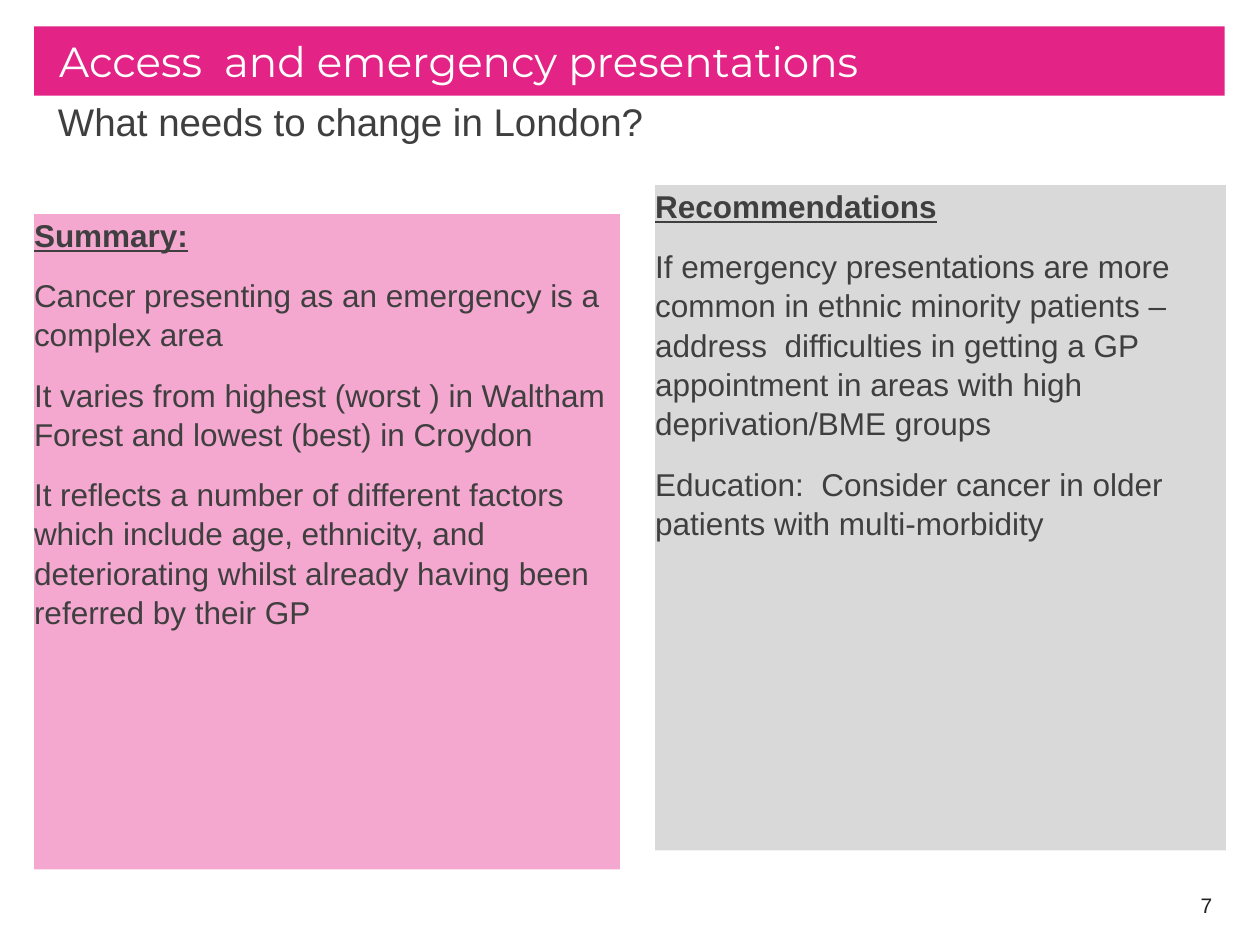
from dataclasses import dataclass
from pptx import Presentation
from pptx.dml.color import RGBColor
from pptx.enum.shapes import MSO_SHAPE
from pptx.enum.text import MSO_ANCHOR, PP_ALIGN
from pptx.slide import Slide
from pptx.util import Inches, Pt

HUES = {
    "pink": "E32486",
    "rose": "F4A7CF",
    "grey": "D9D9D9",
    "white": "FFFFFF",
    "text": "3F3F3F",
    "dark": "202020",
}
EDGE = 0.27
WIDE = 9.45


@dataclass
class Block:
    left: float
    top: float
    width: float
    height: float
    lines: list[str]
    size: int
    ink: str = "text"
    fill: str = ""
    font: str = "Arial"
    inset: float = 0
    head: bool = False
    gap: int = 6
    lead: float = 1.04
    mid: bool = False
    right: bool = False


def hue(name: str) -> RGBColor:
    return RGBColor.from_string(HUES[name])


def draw(slide: Slide, block: Block) -> None:
    box = [Inches(n) for n in (block.left, block.top, block.width, block.height)]
    if block.fill:
        shape = slide.shapes.add_shape(MSO_SHAPE.RECTANGLE, *box)
        shape.shadow.inherit = False
        shape.fill.solid()
        shape.fill.fore_color.rgb = hue(block.fill)
        shape.line.fill.background()
    else:
        shape = slide.shapes.add_textbox(*box)
    frame = shape.text_frame
    frame.word_wrap = True
    frame.margin_top = frame.margin_bottom = 0
    frame.margin_left = Inches(0 if block.right else block.inset)
    frame.margin_right = Inches(block.inset if block.right else 0)
    frame.vertical_anchor = MSO_ANCHOR.MIDDLE if block.mid else MSO_ANCHOR.TOP
    frame.text = "\n".join(block.lines)
    for spot, para in enumerate(frame.paragraphs):
        para.alignment = PP_ALIGN.RIGHT if block.right else PP_ALIGN.LEFT
        para.space_before = para.space_after = Pt(block.gap)
        para.line_spacing = block.lead
        for run in para.runs:
            font = run.font
            font.name = block.font
            font.size = Pt(block.size)
            font.color.rgb = hue(block.ink)
            font.bold = font.underline = block.head and spot == 0


BLOCKS = [
    Block(EDGE, 0.21, WIDE, 0.55, ["Access  and emergency presentations"], 24,
          ink="white", fill="pink", font="Montserrat", inset=0.2,
          gap=0, lead=1.0, mid=True),
    Block(EDGE, 0.76, WIDE, 0.47, ["What needs to change in London?"], 22,
          inset=0.19),
    Block(7.39, 6.98, 2.33, 0.4, ["7"], 12, ink="dark", inset=0.1,
          gap=0, lead=1.0, mid=True, right=True),
    Block(EDGE, 1.7, 4.65, 5.2, [
        "Summary:",
        "Cancer presenting as an emergency is a complex area",
        "It varies from highest (worst ) in Waltham Forest and lowest (best) "
        "in Croydon",
        "It reflects a number of different factors which include age, "
        "ethnicity, and deteriorating whilst already having been referred by "
        "their GP",
    ], 18, fill="rose", head=True),
    Block(5.2, 1.47, 4.53, 5.28, [
        "Recommendations",
        "If emergency presentations are more common in ethnic minority "
        "patients – address  difficulties in getting a GP appointment in "
        "areas with high deprivation/BME groups",
        "Education:  Consider cancer in older patients with multi-morbidity",
    ], 18, fill="grey", head=True),
]


def main() -> None:
    deck = Presentation()
    deck.slide_width = Inches(10)
    deck.slide_height = Inches(7.5)
    slide = deck.slides.add_slide(deck.slide_layouts[6])
    for block in BLOCKS:
        draw(slide, block)
    deck.save("out.pptx")


if __name__ == "__main__":
    main()
